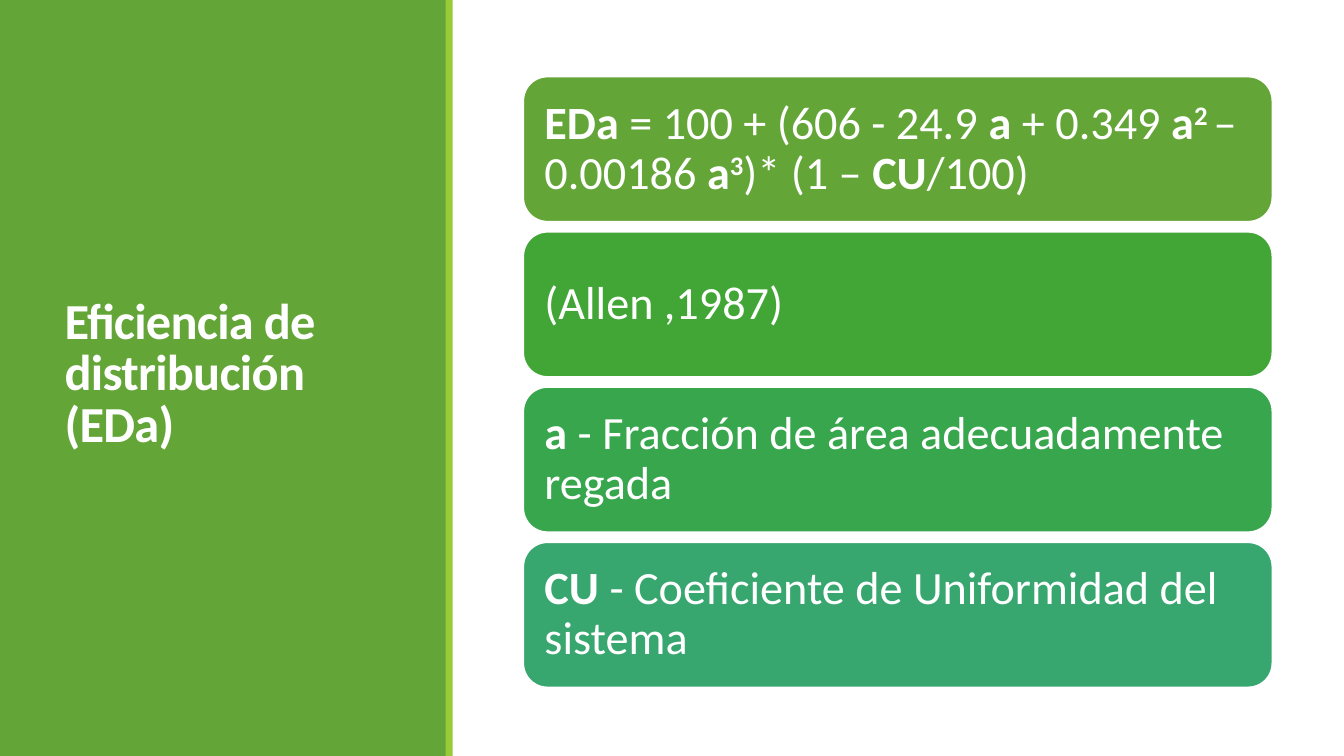
from pptx import Presentation
from pptx import util as u
from pptx.dml.color import RGBColor
from pptx.enum import shapes, text

WIDTH, HEIGHT = 13.33, 7.5
WHITE, GREEN, LIME = "FFFFFF", "63A537", "99CB38"
CARD_LEFT, CARD_TOP, CARD_WIDTH, CARD_HEIGHT = 5.19, 0.76, 7.43, 1.44
CARD_PITCH = 1.54
BOLD, RAISED = {"bold": True}, {"bold": True, "baseline": "30000"}
PLAIN = {"bold": False}

# Each card: fill colour and its text spans
CARDS = [
    (GREEN, [("EDa", BOLD), (" = 100 + (606 - 24.9 ", PLAIN), ("a", BOLD),
             (" + 0.349 ", PLAIN), ("a", BOLD), ("2 ", RAISED),
             ("– 0.00186 ", PLAIN), ("a", BOLD), ("3", RAISED),
             (")* (1 – ", PLAIN), ("CU", BOLD), ("/100)", PLAIN)]),
    ("42A637", [("(Allen ,1987)", PLAIN)]),
    ("37A64D", [("a", BOLD), (" - Fracción de área adecuadamente regada", PLAIN)]),
    ("37A76F", [("CU", BOLD), (" - Coeficiente de Uniformidad del sistema", PLAIN)]),
]


def add_block(kind, left, top, width, height, fill):
    """Add a filled shape without line or shadow, measured in inches."""
    block = page.shapes.add_shape(kind, *map(u.Inches, (left, top, width, height)))
    block.shadow.inherit = False
    block.fill.solid()
    block.fill.fore_color.rgb = RGBColor.from_string(fill)
    block.line.fill.background()
    return block


def add_span(para, words, size, bold=False, baseline=None, spacing=None):
    span = para.add_run()
    span.text = words
    for name, value in {"name": "Calibri", "size": u.Pt(size), "bold": bold}.items():
        setattr(span.font, name, value)
    span.font.color.rgb = RGBColor.from_string(WHITE)
    for name, value in {"baseline": baseline, "spc": spacing}.items():
        if value:
            span.font._element.set(name, value)


deck = Presentation()
deck.slide_width, deck.slide_height = u.Inches(WIDTH), u.Inches(HEIGHT)
page = deck.slides.add_slide(deck.slide_layouts[5])

# Side panel with its accent strip
add_block(shapes.MSO_SHAPE.RECTANGLE, 0, 0, 4.43, HEIGHT, GREEN)
add_block(shapes.MSO_SHAPE.RECTANGLE, 4.42, 0, 0.07, HEIGHT, LIME)

# Title, brought in front of the panel
title = page.shapes.title
page.shapes._spTree.append(title._element)
place = {"left": 0.54, "top": 0.57, "width": 3.37, "height": 6.31}
for name, value in place.items():
    setattr(title, name, u.Inches(value))
frame = title.text_frame
frame.word_wrap = True
frame.auto_size = text.MSO_AUTO_SIZE.NONE
frame.vertical_anchor = text.MSO_ANCHOR.MIDDLE
para = frame.paragraphs[0]
para.alignment = text.PP_ALIGN.LEFT
para.line_spacing = 0.85
add_span(para, "Eficiencia de distribución (EDa)", 36, bold=True, spacing="-50")

# Stack of cards
for row, (fill, spans) in enumerate(CARDS):
    card = add_block(shapes.MSO_SHAPE.ROUNDED_RECTANGLE, CARD_LEFT,
                     CARD_TOP + row * CARD_PITCH, CARD_WIDTH, CARD_HEIGHT, fill)
    card.line.color.rgb = RGBColor.from_string(WHITE)
    card.line.width = u.Pt(1.25)
    frame = card.text_frame
    frame.word_wrap = True
    frame.vertical_anchor = text.MSO_ANCHOR.MIDDLE
    for side in ("left", "top", "right", "bottom"):
        setattr(frame, f"margin_{side}", u.Inches(0.14))
    para = frame.paragraphs[0]
    para.alignment = text.PP_ALIGN.LEFT
    para.line_spacing = 0.9
    for words, style in spans:
        add_span(para, words, 33, **style)

deck.save("out.pptx")
